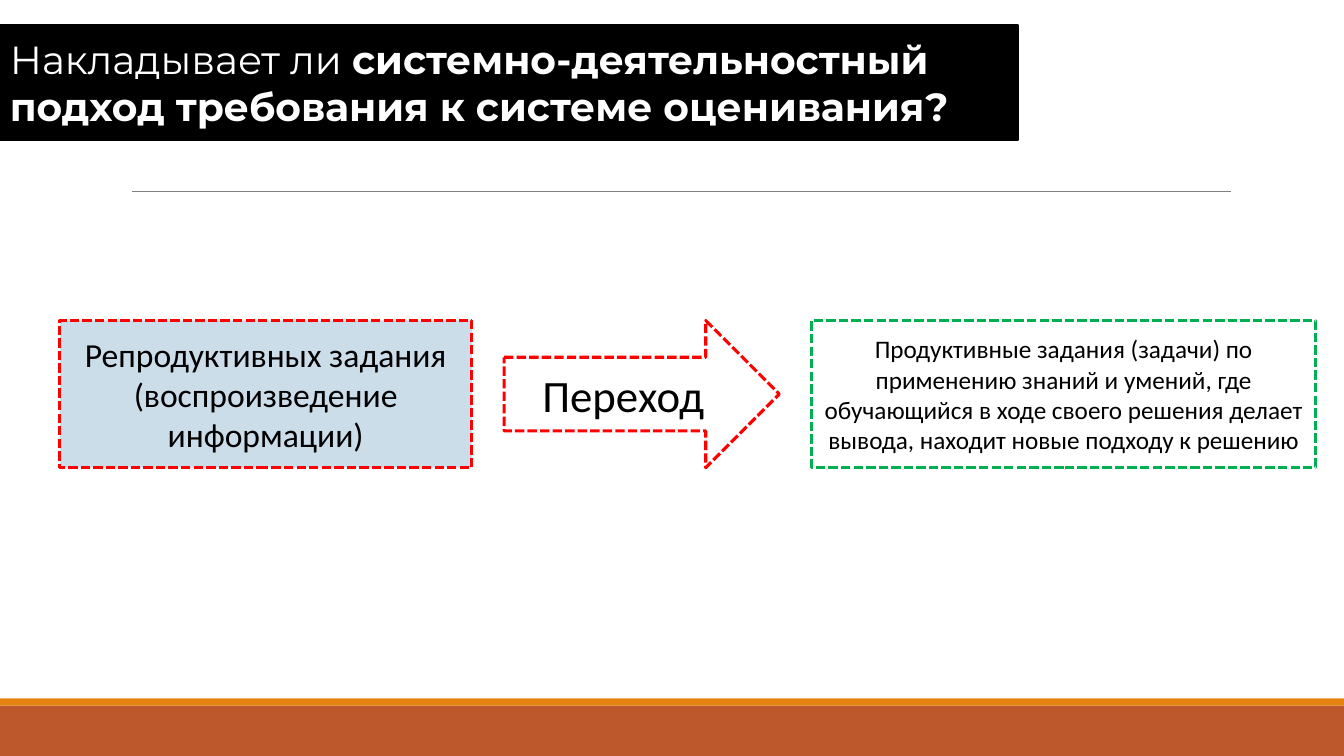
from lxml import etree
from pptx import Presentation
from pptx.dml.color import RGBColor
from pptx.enum.dml import MSO_LINE
from pptx.enum.shapes import MSO_CONNECTOR, MSO_SHAPE
from pptx.enum.text import MSO_ANCHOR, PP_ALIGN
from pptx.oxml.ns import qn
from pptx.util import Inches, Pt

BLACK = RGBColor(0x00, 0x00, 0x00)
WHITE = RGBColor(0xFF, 0xFF, 0xFF)
GRAY = RGBColor(0x80, 0x80, 0x80)
RUST = RGBColor(0xBD, 0x58, 0x2C)
ORANGE = RGBColor(0xE4, 0x83, 0x12)
RED = RGBColor(0xFF, 0x00, 0x00)
GREEN = RGBColor(0x00, 0xB0, 0x50)
PALE_BLUE = RGBColor(0xCC, 0xDD, 0xEA)

SLIDE_WIDTH, SLIDE_HEIGHT = 13.33, 7.5
FOOTER_HEIGHT, STRIPE_HEIGHT = 0.5, 0.07
ROW_TOP, ROW_HEIGHT = 3.18, 1.46

presentation = Presentation()
presentation.slide_width = Inches(SLIDE_WIDTH)
presentation.slide_height = Inches(SLIDE_HEIGHT)
slide = presentation.slides.add_slide(presentation.slide_layouts[6])


def add_filled(kind, left, top, width, height, fill):
    shape = slide.shapes.add_shape(
        kind, Inches(left), Inches(top), Inches(width), Inches(height))
    shape.shadow.inherit = False
    shape.fill.solid()
    shape.fill.fore_color.rgb = fill
    shape.line.fill.background()
    return shape


def set_text(shape, runs, align, font_name, size, color):
    frame = shape.text_frame
    frame.word_wrap = True
    frame.vertical_anchor = MSO_ANCHOR.MIDDLE
    paragraph = frame.paragraphs[0]
    paragraph.alignment = align
    paragraph.font.name = font_name
    paragraph.font.size = Pt(size)
    paragraph.font.color.rgb = color
    for text, bold in runs:
        run = paragraph.add_run()
        run.text = text
        run.font.bold = bold


footer_top = SLIDE_HEIGHT - FOOTER_HEIGHT
add_filled(MSO_SHAPE.RECTANGLE, 0, footer_top, SLIDE_WIDTH, FOOTER_HEIGHT, RUST)
add_filled(MSO_SHAPE.RECTANGLE, 0, footer_top - STRIPE_HEIGHT,
           SLIDE_WIDTH, STRIPE_HEIGHT, ORANGE)

divider = slide.shapes.add_connector(
    MSO_CONNECTOR.STRAIGHT, Inches(1.31), Inches(1.9), Inches(12.21), Inches(1.9))
divider.line.color.rgb = GRAY
divider.line.width = Pt(0.5)
etree.SubElement(divider.element.spPr, qn("a:effectLst"))

title = add_filled(MSO_SHAPE.RECTANGLE, 0, 0.25, 10.1, 1.14, BLACK)
title.line.color.rgb = BLACK
title.line.width = Pt(1.25)
title_runs = [
    ("Накладывает ли ", False),
    ("системно-деятельностный подход требования к системе оценивания?", True),
]
set_text(title, title_runs, PP_ALIGN.LEFT, "Montserrat", 28, WHITE)

steps = [
    (MSO_SHAPE.RECTANGLE, 0.59, 4.09, PALE_BLUE, RED, 24,
     "Репродуктивных задания (воспроизведение информации)"),
    (MSO_SHAPE.RECTANGLE, 8.05, 5, WHITE, GREEN, 18,
     "Продуктивные задания (задачи) по применению знаний и умений, где "
     "обучающийся в ходе своего решения делает вывода, находит новые "
     "подходу к решению"),
    (MSO_SHAPE.RIGHT_ARROW, 5, 2.73, WHITE, RED, 32, "Переход"),
]
for kind, left, width, fill, outline, size, text in steps:
    step = add_filled(kind, left, ROW_TOP, width, ROW_HEIGHT, fill)
    step.line.color.rgb = outline
    step.line.width = Pt(2.25)
    step.line.dash_style = MSO_LINE.SQUARE_DOT
    set_text(step, [(text, False)], PP_ALIGN.CENTER, "Calibri", size, BLACK)

presentation.save("out.pptx")
